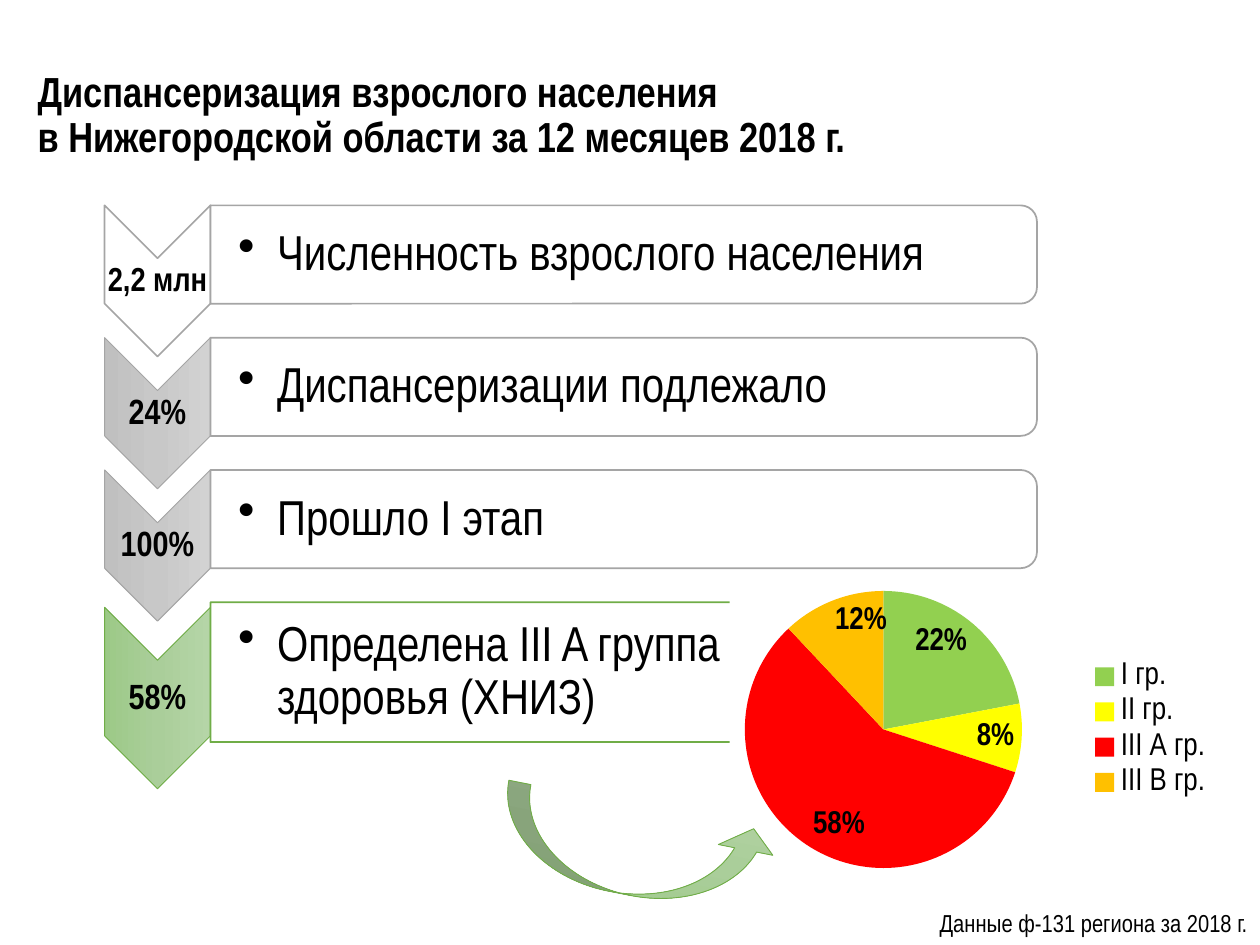
from copy import deepcopy
from dataclasses import dataclass

from lxml import etree
from pptx import Presentation
from pptx import util as u
from pptx.chart.data import CategoryChartData
from pptx.dml.color import RGBColor
from pptx.enum import chart as charts, shapes, text
from pptx.oxml import parse_xml
from pptx.oxml.ns import nsdecls, qn

FONT = "Arial Narrow"
BLACK = RGBColor(0x00, 0x00, 0x00)
WHITE = RGBColor(0xFF, 0xFF, 0xFF)
GRAY = RGBColor(0xA5, 0xA5, 0xA5)
GREEN = RGBColor(0x70, 0xAD, 0x47)
GRAY_SHADES = tuple(map(RGBColor.from_string, ("D2D2D2", "C8C8C8", "C0C0C0")))
GREEN_SHADES = tuple(map(RGBColor.from_string, ("B5D5A7", "AACE9A", "9CC987")))

CHEVRON_LEFT, CHEVRON_WIDTH = 0.83, 0.84
PANEL_LEFT, PANEL_WIDTH = 1.67, 6.56
FIRST_TOP, ROW_STEP = 1.63, 1.05


@dataclass
class Step:
    value: str
    lines: list[str]
    line: RGBColor = GRAY
    shades: tuple = GRAY_SHADES
    top: float = 0
    height: float = 0.78
    chevron_top: float = 0
    chevron_height: float = 1.2
    value_size: float = 20


@dataclass
class Group:
    name: str
    percent: int
    color: RGBColor


STEPS = [
    Step("2,2 млн", ["Численность взрослого населения"], shades=(WHITE,), value_size=19),
    Step("24%", ["Диспансеризации подлежало"]),
    Step("100%", ["Прошло I этап"]),
    Step("58%", ["Определена III A группа", "здоровья (ХНИЗ)"], GREEN, GREEN_SHADES,
         height=1.11, chevron_height=1.44),
]
for index, step in enumerate(STEPS):
    step.top = step.chevron_top = FIRST_TOP + index * ROW_STEP
STEPS[-1].chevron_top += 0.04

GROUPS = [
    Group("I гр.", 22, RGBColor(0x92, 0xD0, 0x50)),
    Group("II гр.", 8, RGBColor(0xFF, 0xFF, 0x00)),
    Group("III A гр.", 58, RGBColor(0xFF, 0x00, 0x00)),
    Group("III B гр.", 12, RGBColor(0xFF, 0xC0, 0x00)),
]


def add_text(slide, box: tuple, lines: list[str], size: float, bold: bool = False,
             align=text.PP_ALIGN.LEFT, anchor=text.MSO_ANCHOR.MIDDLE,
             insets: tuple = (0.1, 0.05, 0.1, 0.05), spacing: float = 0.9):
    """Add one paragraph with line breaks and return it."""
    frame = slide.shapes.add_textbox(*map(u.Inches, box)).text_frame
    frame.word_wrap = True
    frame.vertical_anchor = anchor
    (frame.margin_left, frame.margin_top,
     frame.margin_right, frame.margin_bottom) = map(u.Inches, insets)
    paragraph = frame.paragraphs[0]
    paragraph.alignment = align
    paragraph.line_spacing = spacing
    for number, line in enumerate(lines):
        if number:
            paragraph.add_line_break()
        run = paragraph.add_run()
        run.text = line
        run.font.name, run.font.size, run.font.bold = FONT, u.Pt(size), bold
        run.font.color.rgb = BLACK
    return paragraph


def add_outline(slide, kind, box: tuple, shades: tuple, line: RGBColor, width: float):
    """Add a shape with a plain or evenly stepped gradient fill."""
    shape = slide.shapes.add_shape(kind, *map(u.Inches, box))
    shape.shadow.inherit = False
    shape.line.color.rgb = line
    shape.line.width = u.Pt(width)
    if len(shades) == 1:
        shape.fill.solid()
        shape.fill.fore_color.rgb = shades[0]
        return shape
    shape.fill.gradient()
    shape.fill.gradient_angle = 270
    stops = shape._element.spPr.find(".//" + qn("a:gsLst"))
    stops.insert(1, deepcopy(stops[0]))
    for number, (stop, shade) in enumerate(zip(shape.fill.gradient_stops, shades)):
        stop.color.rgb = shade
        stop.position = number / (len(shades) - 1)
    return shape


def add_turned(slide, kind, left: float, top: float, width: float, height: float,
               shades: tuple, line: RGBColor, line_width: float) -> None:
    """Add a shape turned by 90 degrees that covers the given area."""
    shift = (width - height) / 2
    shape = add_outline(slide, kind, (left + shift, top - shift, height, width),
                        shades, line, line_width)
    shape.rotation = 90


def add_step(slide, step: Step) -> None:
    add_turned(slide, shapes.MSO_SHAPE.CHEVRON, CHEVRON_LEFT, step.chevron_top,
               CHEVRON_WIDTH, step.chevron_height, step.shades, step.line,
               1 if len(step.shades) == 1 else 0.5)
    add_text(slide, (CHEVRON_LEFT, step.chevron_top + CHEVRON_WIDTH / 2, CHEVRON_WIDTH,
                     step.chevron_height - CHEVRON_WIDTH),
             [step.value], step.value_size, True, text.PP_ALIGN.CENTER, insets=(0.01,) * 4)
    add_turned(slide, shapes.MSO_SHAPE.ROUND_2_SAME_RECTANGLE, PANEL_LEFT, step.top,
               PANEL_WIDTH, step.height, (WHITE,), step.line, 1)
    paragraph = add_text(slide, (PANEL_LEFT, step.top + 0.04, 6.53, step.height - 0.08),
                         step.lines, 28, insets=(0.22, 0.02, 0.02, 0.02))
    properties = paragraph._p.get_or_add_pPr()
    properties.set("marL", str(u.Inches(0.31)))
    properties.set("indent", str(-u.Inches(0.31)))
    etree.SubElement(properties, qn("a:buChar")).set("char", "•")


def add_pie(slide) -> None:
    data = CategoryChartData()
    data.categories = [group.name for group in GROUPS]
    data.add_series("Группы здоровья", [group.percent for group in GROUPS])
    chart = slide.shapes.add_chart(charts.XL_CHART_TYPE.PIE,
                                   *map(u.Inches, (5.79, 4.69, 3.94, 2.2)), data).chart
    chart.has_title = False
    chart.font.name, chart.font.size = "Calibri", u.Pt(18)
    chart.font.color.rgb = BLACK
    chart.has_legend = True
    chart.legend.position = charts.XL_LEGEND_POSITION.RIGHT
    chart.legend.include_in_layout = False
    chart.legend.font.name = FONT
    plot = chart.plots[0]
    plot.vary_by_categories = True
    for number, group in enumerate(GROUPS):
        fill = plot.series[0].points[number].format.fill
        fill.solid()
        fill.fore_color.rgb = group.color
    labels = plot.series[0].data_labels
    labels.show_percentage, labels.show_value = True, False
    labels.number_format, labels.number_format_is_linked = "0%", False
    labels.position = charts.XL_LABEL_POSITION.INSIDE_END
    labels.font.name, labels.font.size, labels.font.bold = FONT, u.Pt(18), True
    labels.font.color.rgb = BLACK

    # Fixed plot area and white chart background
    area = chart._chartSpace.chart.plotArea
    for old in area.findall(qn("c:layout")):
        area.remove(old)
    modes = '<c:layoutTarget val="inner"/><c:xMode val="edge"/><c:yMode val="edge"/>'
    sizes = "".join(f'<c:{key} val="{value}"/>' for key, value in
                    (("x", 0.03), ("y", 0), ("w", 0.56), ("h", 1)))
    area.insert(0, parse_xml(f'<c:layout {nsdecls("c")}><c:manualLayout>{modes}{sizes}'
                             '</c:manualLayout></c:layout>'))
    chart._chartSpace.chart.addnext(parse_xml(
        f'<c:spPr {nsdecls("c", "a")}><a:solidFill><a:srgbClr val="{WHITE}"/></a:solidFill>'
        '<a:ln><a:noFill/></a:ln></c:spPr>'))


def main() -> None:
    presentation = Presentation()
    presentation.slide_width, presentation.slide_height = u.Inches(10), u.Inches(7.5)
    slide = presentation.slides.add_slide(presentation.slide_layouts[6])

    # Title and source note
    add_text(slide, (0.2, 0.3, 9.53, 1.25),
             ["Диспансеризация взрослого населения",
              "в Нижегородской области за 12 месяцев 2018 г."], 24, True)
    add_text(slide, (1.06, 7.16, 8.94, 0.34), ["Данные ф-131 региона за 2018 г."], 14,
             align=text.PP_ALIGN.RIGHT, anchor=text.MSO_ANCHOR.TOP, spacing=1.0)

    # Steps, then the chart over the last one
    for step in STEPS:
        add_step(slide, step)
    add_pie(slide)

    # Arrow from the last step to the chart
    arrow = add_outline(slide, shapes.MSO_SHAPE.CURVED_UP_ARROW, (3.95, 6.4, 2.2, 0.71),
                        GREEN_SHADES, GREEN, 0.5)
    arrow.rotation = 11.2
    for number, value in enumerate((0.25, 0.62, 0.25)):
        arrow.adjustments[number] = value

    presentation.save("out.pptx")


if __name__ == "__main__":
    main()
